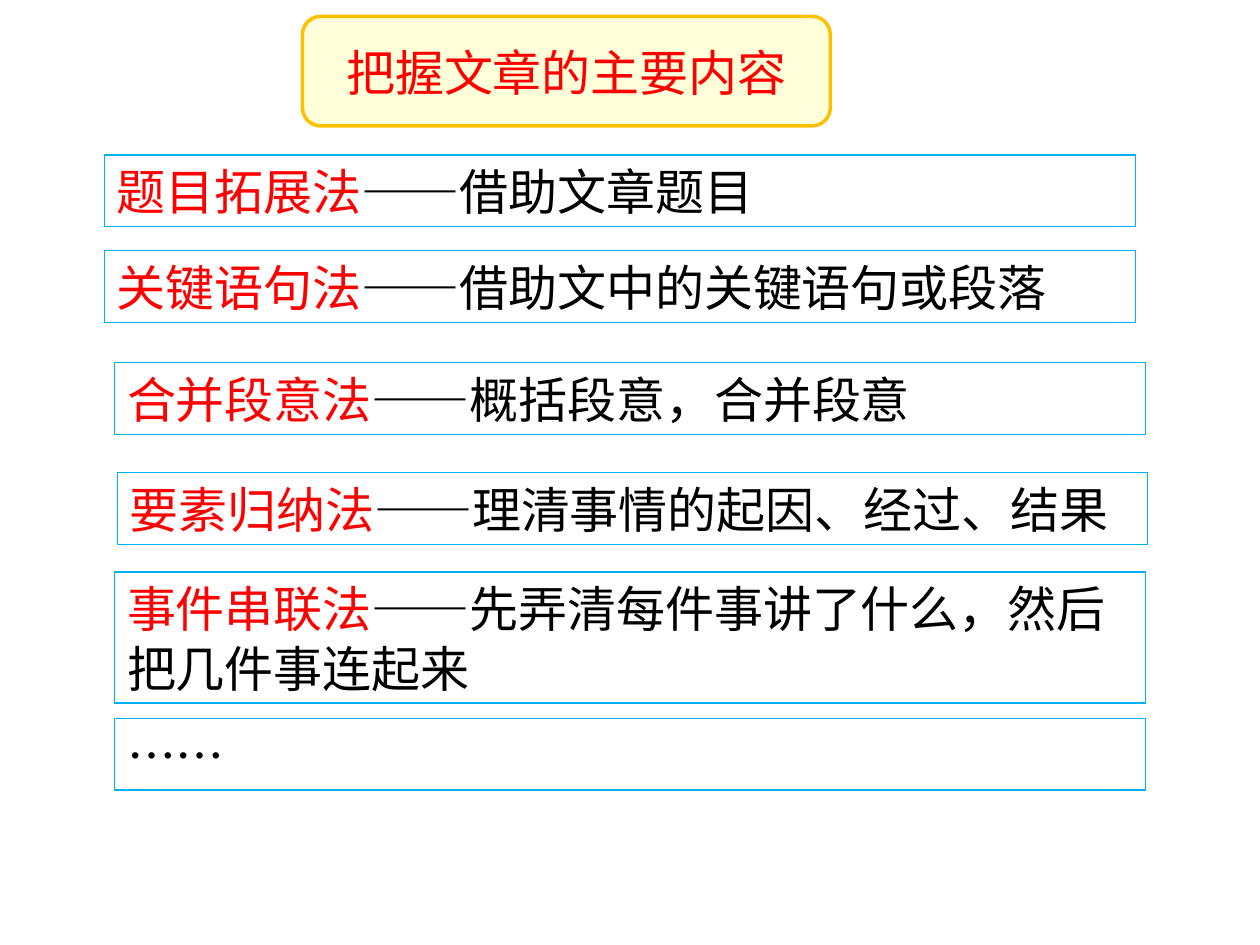
"""Build a slide listing methods for grasping the main content of an article."""
from lxml import etree
from pptx import Presentation
from pptx.dml.color import RGBColor
from pptx.enum.shapes import MSO_SHAPE
from pptx.enum.text import MSO_ANCHOR, PP_ALIGN
from pptx.oxml.ns import qn
from pptx.util import Inches, Pt

RECTANGLE, ROUNDED = MSO_SHAPE.RECTANGLE, MSO_SHAPE.ROUNDED_RECTANGLE
TOP, MIDDLE = MSO_ANCHOR.TOP, MSO_ANCHOR.MIDDLE
LEFT, CENTER = PP_ALIGN.LEFT, PP_ALIGN.CENTER
RED = RGBColor(0xFF, 0x00, 0x00)
BLACK = RGBColor(0x00, 0x00, 0x00)
BLUE = RGBColor(0x00, 0xB0, 0xF0)
GOLD = RGBColor(0xFF, 0xC0, 0x00)
CREAM = RGBColor(0xFF, 0xFF, 0xD9)
FONT = "Noto Sans CJK SC"

deck = Presentation()
deck.slide_width, deck.slide_height = Inches(10), Inches(7.5)
page = deck.slides.add_slide(deck.slide_layouts[6])


def add_box(texts, at, shape=RECTANGLE, fill=None, line=BLUE, width=0.75, anchor=TOP, align=LEFT):
    box = page.shapes.add_shape(shape, *(Inches(length) for length in at))
    box.shadow.inherit = False
    if fill is None:
        box.fill.background()
    else:
        box.fill.solid()
        box.fill.fore_color.rgb = fill
    box.line.color.rgb = line
    box.line.width = Pt(width)
    frame = box.text_frame
    frame.word_wrap = True
    frame.vertical_anchor = anchor
    para = frame.paragraphs[0]
    para.alignment = align
    para.line_spacing = Pt(34)
    for text, color in texts:
        span = para.add_run()
        span.text = text
        span.font.size = Pt(28)
        span.font.name = FONT
        span.font.color.rgb = color
        east_asian = etree.SubElement(span.font._element, qn("a:ea"))
        east_asian.set("typeface", FONT)


add_box([("把握文章的主要内容", RED)], (2.4, 0.13, 4.19, 0.87), shape=ROUNDED,
        fill=CREAM, line=GOLD, width=2, anchor=MIDDLE, align=CENTER)

methods = [
    (0.83, 1.23, 0.57, "题目拓展法", "——借助文章题目"),
    (0.83, 1.99, 0.57, "关键语句法", "——借助文中的关键语句或段落"),
    (0.91, 2.88, 0.57, "合并段意法", "——概括段意，合并段意"),
    (0.93, 3.75, 0.57, "要素归纳法", "——理清事情的起因、经过、结果"),
    (0.91, 4.54, 1.04, "事件串联法", "——先弄清每件事讲了什么，然后把几件事连起来"),
]
for left, top, height, method, detail in methods:
    add_box([(method, RED), (detail, BLACK)], (left, top, 8.18, height))
add_box([("……", BLACK)], (0.91, 5.7, 8.18, 0.57))

deck.save("out.pptx")
